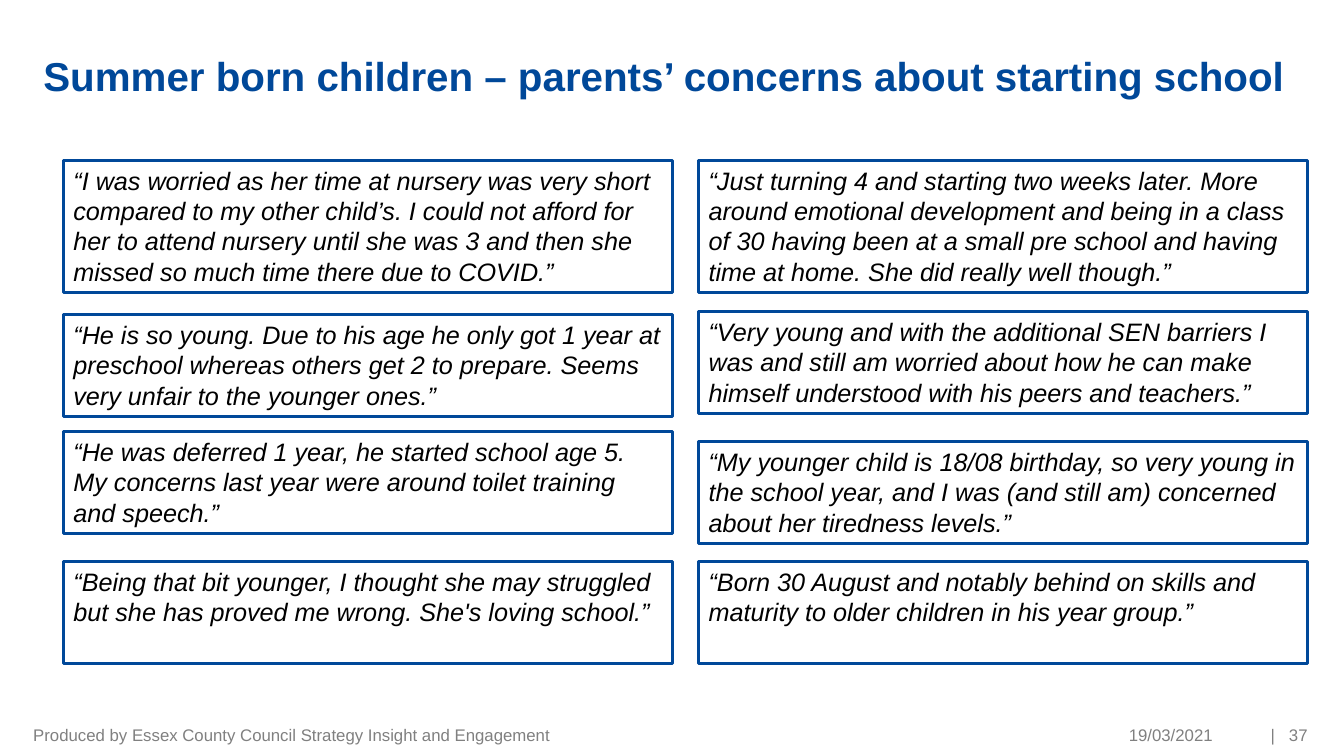
from pptx import Presentation
from pptx.dml.color import RGBColor
from pptx.enum.shapes import MSO_SHAPE as Shape
from pptx.enum.text import MSO_ANCHOR as Anchor, MSO_AUTO_SIZE as Fit, PP_ALIGN as Align
from pptx.util import Inches, Pt

BLUE = RGBColor(0x00, 0x48, 0x99)
GREY = RGBColor(0x80, 0x80, 0x80)
BLACK = RGBColor(0x00, 0x00, 0x00)

TITLE = "Summer born children – parents’ concerns about starting school"
LEFT = [
    (1.59, 1.31, "“I was worried as her time at nursery was very short compared to my other child’s. "
                 "I could not afford for her to attend nursery until she was 3 and then she missed "
                 "so much time there due to COVID.”"),
    (3.12, 1.01, "“He is so young. Due to his age he only got 1 year at preschool whereas others "
                 "get 2 to prepare. Seems very unfair to the younger ones.”"),
    (4.28, 1.01, "“He was deferred 1 year, he started school age 5. My concerns last year were "
                 "around toilet training and speech.”"),
    (5.57, 1.01, "“Being that bit younger, I thought she may struggled but she has proved me wrong. "
                 "She's loving school.”"),
]
RIGHT = [
    (1.59, 1.31, "“Just turning 4 and starting two weeks later. More around emotional development "
                 "and being in a class of 30 having been at a small pre school and having time at "
                 "home. She did really well though.”"),
    (3.09, 1.01, "“Very young and with the additional SEN barriers I was and still am worried about "
                 "how he can make himself understood with his peers and teachers.”"),
    (4.38, 1.01, "“My younger child is 18/08 birthday, so very young in the school year, and I was "
                 "(and still am) concerned about her tiredness levels.”"),
    (5.57, 1.01, "“Born 30 August and notably behind on skills and maturity to older children in "
                 "his year group.”"),
]
FOOTER = [
    (0, 6.3, Align.LEFT, "Produced by Essex County Council Strategy Insight and Engagement"),
    (9.3, 2.4, Align.RIGHT, "19/03/2021"),
    (11.79, 0.85, Align.RIGHT, "|   37"),
]


def write(frame, text, size, color, align=Align.LEFT, bold=False, italic=False):
    frame.text = text
    frame.word_wrap = True
    frame.auto_size = Fit.NONE
    para = frame.paragraphs[0]
    para.alignment = align
    font = para.runs[0].font
    font.name = "Arial"
    font.size = Pt(size)
    font.color.rgb = color
    font.bold = bold
    font.italic = italic


def add_title(slide, left, top, width, height):
    title = slide.shapes.title
    title.left, title.top = Inches(left), Inches(top)
    title.width, title.height = Inches(width), Inches(height)
    frame = title.text_frame
    write(frame, TITLE, 28.8, BLUE, bold=True)
    frame.vertical_anchor = Anchor.BOTTOM
    frame.margin_bottom = 0
    frame.paragraphs[0].line_spacing = 0.9


def add_quotes(slide, left, width, quotes):
    for top, height, text in quotes:
        box = slide.shapes.add_shape(Shape.RECTANGLE, Inches(left), Inches(top),
                                     Inches(width), Inches(height))
        box.shadow.inherit = False
        box.fill.background()
        box.line.color.rgb = BLUE
        box.line.width = Pt(2.25)
        write(box.text_frame, text, 18, BLACK, italic=True)
        box.text_frame.vertical_anchor = Anchor.TOP


def add_footer(slide, left, top, height):
    for shift, width, align, text in FOOTER:
        box = slide.shapes.add_textbox(Inches(left + shift), Inches(top),
                                       Inches(width), Inches(height))
        frame = box.text_frame
        write(frame, text, 12, GREY, align)
        frame.vertical_anchor = Anchor.MIDDLE
        if align == Align.LEFT:
            frame.margin_left = 0
        else:
            frame.margin_right = 0


def main():
    deck = Presentation()
    deck.slide_width, deck.slide_height = Inches(13.33), Inches(7.5)
    slide = deck.slides.add_slide(deck.slide_layouts[5])
    add_title(slide, 0.33, 0.08, 12.63, 0.91)
    add_quotes(slide, 0.63, 6.04, LEFT)
    add_quotes(slide, 6.93, 6.04, RIGHT)
    add_footer(slide, 0.33, 7.21, 0.15)
    deck.save("out.pptx")


if __name__ == "__main__":
    main()
